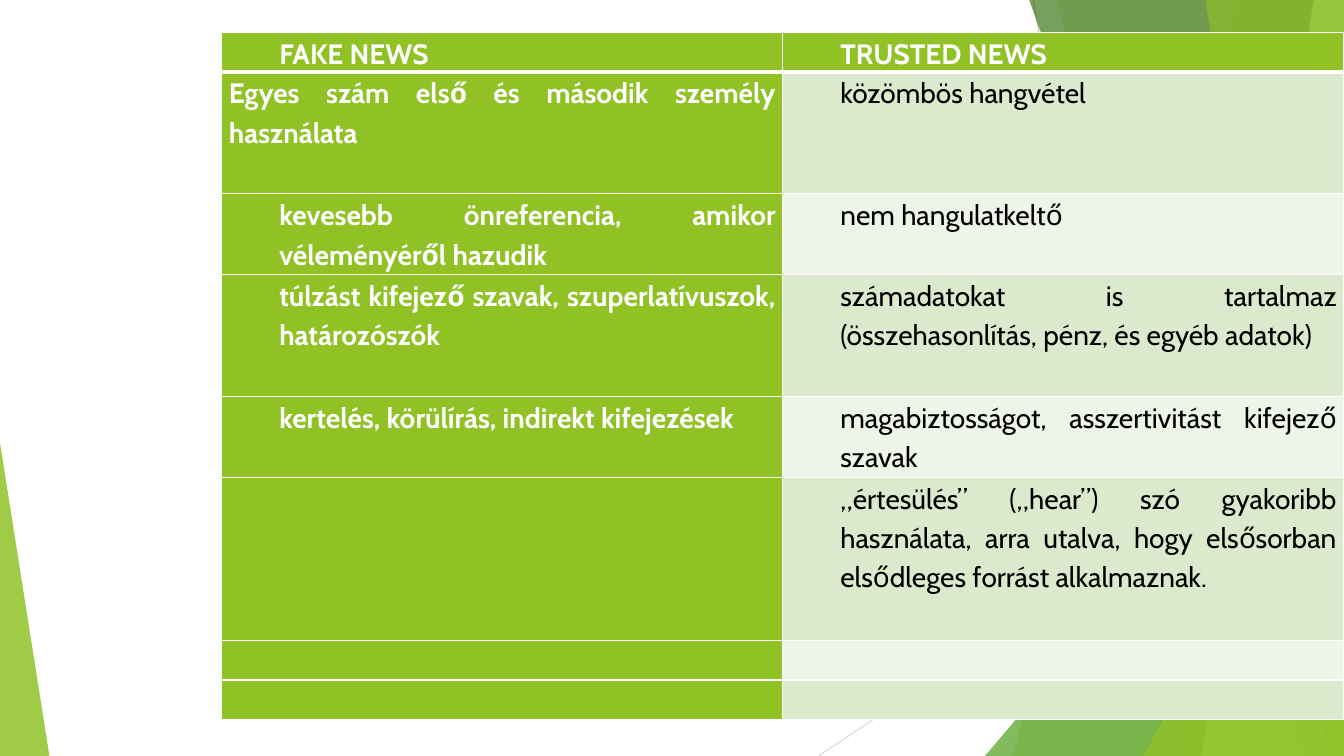
from dataclasses import dataclass

import pptx
import pptx.dml.color
import pptx.enum.shapes
import pptx.enum.text
import pptx.oxml.ns
import pptx.util
from lxml import etree

qn = pptx.oxml.ns.qn

# Slide grid: 100 columns by 100 rows
WIDTH = pptx.util.Inches(13.333)
HEIGHT = pptx.util.Inches(7.5)


def col(n: float) -> int:
    return round(WIDTH * n / 100)


def row(n: float) -> int:
    return round(HEIGHT * n / 100)


@dataclass(frozen=True)
class Theme:
    font: str = "Cabin"
    size: float = 20
    spacing: float = 1.15
    green: str = "90C226"
    leaf: str = "54A021"
    forest: str = "3F7819"
    lime: str = "C0E474"
    band_dark: str = "DBE9CD"
    band_light: str = "EEF4E8"
    white: str = "FFFFFF"
    black: str = "000000"
    gray: str = "BFBFBF"
    pale_gray: str = "D9D9D9"


THEME = Theme()


@dataclass(frozen=True)
class Ray:
    x1: float
    y1: float
    x2: float
    y2: float
    color: str


@dataclass(frozen=True)
class Facet:
    """Area from a slanted left edge to the right side of the slide."""
    top: float
    bottom: float
    color: str
    alpha: int


@dataclass(frozen=True)
class Wedge:
    """Triangle standing on the bottom of the slide."""
    left: float
    top: float
    width: float
    apex: float
    color: str
    alpha: int


@dataclass(frozen=True)
class NewsRow:
    height: float
    fake: str = ""
    trusted: str = ""
    fake_indent: float = 3.75


DECOR = [
    Ray(76.88, 0, 86.85, 100, THEME.gray),
    Ray(100, 53.73, 60.9, 100, THEME.pale_gray),
    Facet(92.1, 75.3, THEME.green, 30),
    Facet(78.75, 88.73, THEME.green, 20),
    Wedge(73.28, 44.4, 26.72, 1, THEME.leaf, 72),
    Facet(76.58, 96.83, THEME.forest, 70),
    Facet(97.73, 89.4, THEME.lime, 70),
    Facet(89.7, 98.85, THEME.green, 65),
    Wedge(85.05, 52.4, 14.95, 1, THEME.green, 80),
    Wedge(0, 58.53, 3.68, 0, THEME.green, 85),
]

TABLE_LEFT, TABLE_TOP, COLUMN, INDENT, INSET = 16.5, 4.3, 41.75, 3.75, 0.53
ROWS = [
    NewsRow(5.2, "FAKE NEWS", "TRUSTED NEWS"),
    NewsRow(16.13, "Egyes szám első és második személy használata",
            "közömbös hangvétel", fake_indent=0),
    NewsRow(10.7, "kevesebb önreferencia, amikor véleményéről hazudik",
            "nem hangulatkeltő"),
    NewsRow(16.13, "túlzást kifejező szavak, szuperlatívuszok, határozószók",
            "számadatokat is tartalmaz (összehasonlítás, pénz, és egyéb adatok)"),
    NewsRow(10.7, "kertelés, körülírás, indirekt kifejezések",
            "magabiztosságot, asszertivitást kifejező szavak"),
    NewsRow(21.6, trusted="„értesülés” („hear”) szó gyakoribb használata, arra "
            "utalva, hogy elsősorban elsődleges forrást alkalmaznak."),
    NewsRow(5.2),
    NewsRow(5.2),
]


def rgb(color: str) -> pptx.dml.color.RGBColor:
    return pptx.dml.color.RGBColor.from_string(color)


def paint(sp, color: str, alpha: int) -> None:
    sp.shadow.inherit = False
    sp.line.fill.background()
    sp.fill.solid()
    sp.fill.fore_color.rgb = rgb(color)
    clr = sp._element.spPr.find(qn("a:solidFill"))[0]
    etree.SubElement(clr, qn("a:alpha"), val=str(alpha * 1000))


def draw_ray(shapes, ray: Ray) -> None:
    line = shapes.add_connector(pptx.enum.shapes.MSO_CONNECTOR.STRAIGHT,
                                col(ray.x1), row(ray.y1), col(ray.x2), row(ray.y2))
    line.line.color.rgb = rgb(ray.color)
    line.line.width = pptx.util.Pt(0.75)
    etree.SubElement(line._element.spPr, qn("a:effectLst"))


def draw_facet(shapes, facet: Facet) -> None:
    outline = shapes.build_freeform(col(facet.top), 0)
    outline.add_line_segments([(WIDTH, 0), (WIDTH, HEIGHT),
                               (col(facet.bottom), HEIGHT)], close=True)
    paint(outline.convert_to_shape(), facet.color, facet.alpha)


def draw_wedge(shapes, wedge: Wedge) -> None:
    sp = shapes.add_shape(pptx.enum.shapes.MSO_SHAPE.ISOSCELES_TRIANGLE,
                          col(wedge.left), row(wedge.top),
                          col(wedge.width), row(100 - wedge.top))
    sp.adjustments[0] = wedge.apex
    paint(sp, wedge.color, wedge.alpha)


def write(tf, text: str, *, color: str, bold: bool, indent: float) -> None:
    p = tf.paragraphs[0]
    p.alignment = pptx.enum.text.PP_ALIGN.JUSTIFY
    p.line_spacing = THEME.spacing
    p._p.get_or_add_pPr().set("marL", str(col(indent)))
    r = p.add_run()
    r.text = text
    r.font.name = THEME.font
    r.font.size = pptx.util.Pt(THEME.size)
    r.font.bold = bold
    r.font.color.rgb = rgb(color)


def format_cell(cell, fill: str, bottom: float) -> None:
    cell.margin_left = cell.margin_right = col(INSET)
    cell.margin_top = cell.margin_bottom = 0
    tc_pr = cell._tc.get_or_add_tcPr()
    for side, width in (("L", 1), ("R", 1), ("T", 1), ("B", bottom)):
        ln = etree.SubElement(tc_pr, qn(f"a:ln{side}"), w=str(pptx.util.Pt(width)))
        solid = etree.SubElement(ln, qn("a:solidFill"))
        etree.SubElement(solid, qn("a:srgbClr"), val=THEME.white)
    cell.fill.solid()
    cell.fill.fore_color.rgb = rgb(fill)


def draw_table(shapes) -> None:
    table = shapes.add_table(len(ROWS), 2, col(TABLE_LEFT), row(TABLE_TOP), col(2 * COLUMN),
                             row(sum(item.height for item in ROWS))).table
    table.first_row = table.horz_banding = False
    for column in table.columns:
        column.width = col(COLUMN)
    for i, item in enumerate(ROWS):
        table.rows[i].height = row(item.height)
        band = THEME.band_dark if i % 2 else THEME.band_light
        texts = ((item.fake, item.fake_indent), (item.trusted, INDENT))
        for j, (text, indent) in enumerate(texts):
            strong = i == 0 or j == 0
            cell = table.cell(i, j)
            format_cell(cell, THEME.green if strong else band, 1 if i else 3)
            if text:
                write(cell.text_frame, text, bold=strong, indent=indent,
                      color=THEME.white if strong else THEME.black)


def main() -> None:
    prs = pptx.Presentation()
    prs.slide_width, prs.slide_height = WIDTH, HEIGHT
    shapes = prs.slides.add_slide(prs.slide_layouts[6]).shapes

    # Background facets, back to front
    painters = {Ray: draw_ray, Facet: draw_facet, Wedge: draw_wedge}
    for part in DECOR:
        painters[type(part)](shapes, part)

    # Comparison table
    draw_table(shapes)
    prs.save("out.pptx")


if __name__ == "__main__":
    main()
